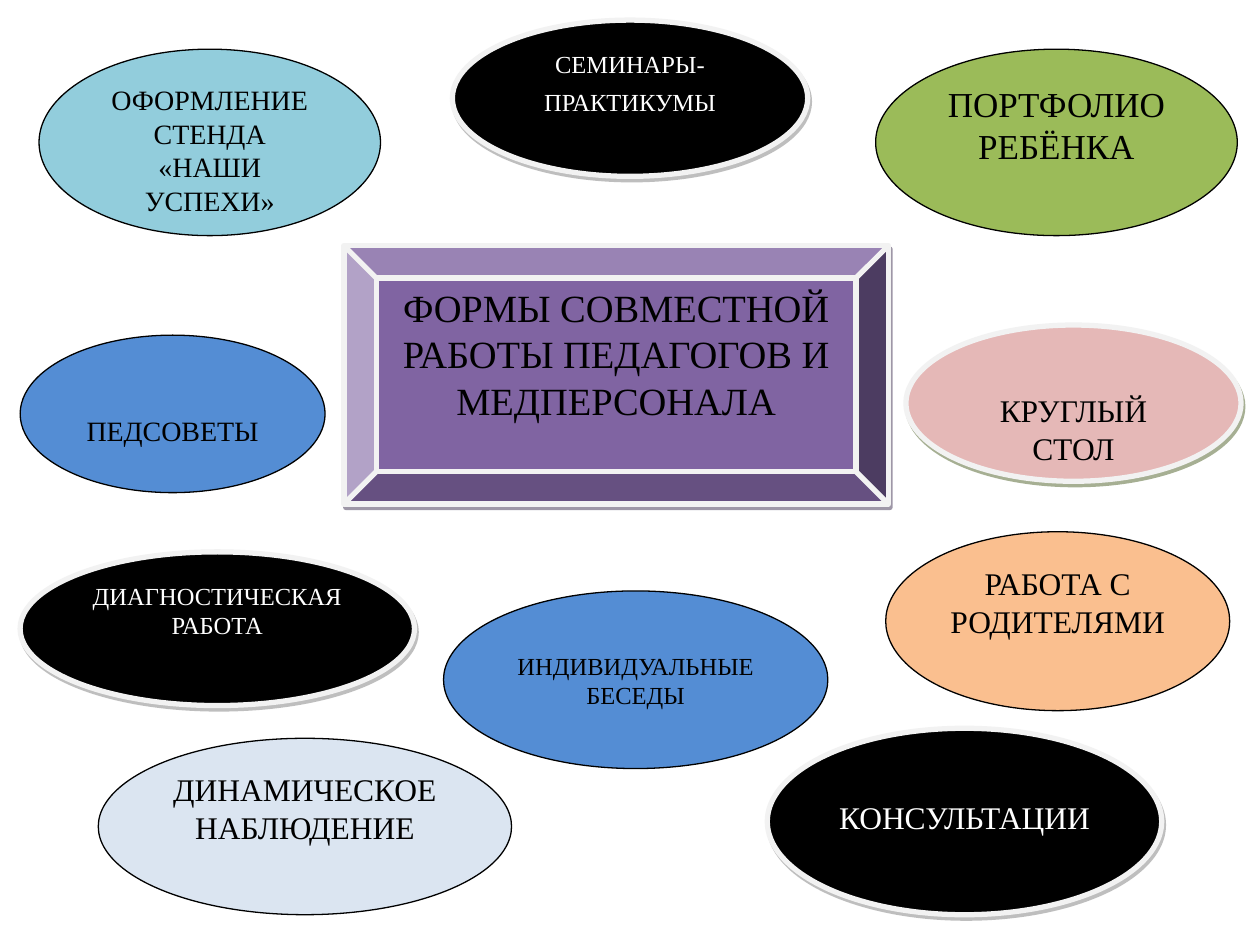
from lxml import etree
from pptx import Presentation
from pptx.dml.color import RGBColor
from pptx.enum.shapes import MSO_SHAPE
from pptx.enum.text import MSO_ANCHOR, PP_ALIGN
from pptx.oxml.ns import qn
from pptx.util import Inches, Pt

OVAL, BEVEL = MSO_SHAPE.OVAL, MSO_SHAPE.BEVEL
TOP, CENTER = MSO_ANCHOR.TOP, PP_ALIGN.CENTER

FONT = "Times New Roman"
BLACK = RGBColor(0x00, 0x00, 0x00)
WHITE = RGBColor(0xFF, 0xFF, 0xFF)
FRAME = RGBColor(0xF2, 0xF2, 0xF2)
PURPLE = RGBColor(0x80, 0x64, 0xA2)
BLUE = RGBColor(0x54, 0x8D, 0xD4)
AQUA = RGBColor(0x92, 0xCD, 0xDC)
GREEN = RGBColor(0x9B, 0xBB, 0x59)
PINK = RGBColor(0xE5, 0xB8, 0xB7)
ORANGE = RGBColor(0xFA, 0xBF, 0x8F)
PALE_BLUE = RGBColor(0xDB, 0xE5, 0xF1)
DARK_PURPLE = RGBColor(0x3F, 0x31, 0x51)
DARK_GREEN = RGBColor(0x4E, 0x61, 0x28)
GRAY = RGBColor(0x7F, 0x7F, 0x7F)

# left, top, width, height, fill, text, size, other format
OVALS = [
    (0.16, 2.66, 2.42, 1.25, BLUE, "ПЕДСОВЕТЫ", 16, dict(drop=0.39)),
    (0.31, 0.39, 2.71, 1.48, AQUA, "ОФОРМЛЕНИЕ СТЕНДА\n«НАШИ УСПЕХИ»", 16, {}),
    (6.95, 0.39, 2.87, 1.48, GREEN, "ПОРТФОЛИО РЕБЁНКА", 20, {}),
    (7.19, 2.58, 2.66, 1.24, PINK, "КРУГЛЫЙ СТОЛ", 18,
     dict(drop=0.29, shadow=DARK_GREEN)),
    (6.09, 5.78, 3.13, 1.48, BLACK, "КОНСУЛЬТАЦИИ", 18,
     dict(drop=0.29, color=WHITE, shadow=GRAY)),
    (3.52, 4.69, 3.05, 1.41, BLUE, "ИНДИВИДУАЛЬНЫЕ\nБЕСЕДЫ", 14, dict(drop=0.22)),
    (3.59, 0.16, 2.82, 1.24, BLACK, "СЕМИНАРЫ-\nПРАКТИКУМЫ", 14,
     dict(after=5, color=WHITE, shadow=GRAY)),
    (7.03, 4.22, 2.73, 1.42, ORANGE, "РАБОТА С РОДИТЕЛЯМИ", 18, {}),
    (0.16, 4.38, 3.13, 1.22, BLACK, "ДИАГНОСТИЧЕСКАЯ РАБОТА", 14,
     dict(color=WHITE, shadow=GRAY)),
    (0.78, 5.86, 3.28, 1.4, PALE_BLUE, "ДИНАМИЧЕСКОЕ НАБЛЮДЕНИЕ", 18, {}),
]


def set_text(sp, text, size, color=BLACK, after=0, drop=0):
    """Write centred paragraphs, starting drop inches below the usual inset."""
    tf = sp.text_frame
    tf.word_wrap = True
    tf.vertical_anchor = TOP
    tf.margin_top = Inches(0.05 + drop)
    for i, line in enumerate(text.split("\n")):
        p = tf.add_paragraph() if i else tf.paragraphs[0]
        p.alignment = CENTER
        p.space_after = Pt(after)
        r = p.add_run()
        r.text = line
        r.font.name = FONT
        r.font.size = Pt(size)
        r.font.color.rgb = color


def add_shadow(sp, color):
    effects = sp._element.spPr.find(qn("a:effectLst"))
    outer = etree.SubElement(effects, qn("a:outerShdw"), blurRad="0",
                             dist=str(Pt(2.2)), dir=str(63 * 60000),
                             algn="ctr", rotWithShape="0")
    clr = etree.SubElement(outer, qn("a:srgbClr"), val=str(color))
    etree.SubElement(clr, qn("a:alpha"), val="50000")


def add_figure(s, kind, left, top, width, height, fill, text, size,
               shadow=None, **text_format):
    """Add a filled shape; one with a shadow also gets a thick light frame."""
    sp = s.shapes.add_shape(kind, Inches(left), Inches(top),
                            Inches(width), Inches(height))
    sp.shadow.inherit = False
    sp.fill.solid()
    sp.fill.fore_color.rgb = fill
    sp.line.color.rgb = FRAME if shadow else BLACK
    sp.line.width = Pt(3 if shadow else 0.75)
    if shadow:
        add_shadow(sp, shadow)
    set_text(sp, text, size, **text_format)


def main():
    prs = Presentation()
    prs.slide_width, prs.slide_height = Inches(10), Inches(7.5)
    s = prs.slides.add_slide(prs.slide_layouts[6])
    add_figure(s, BEVEL, 2.73, 1.95, 4.32, 2.05, PURPLE,
               "ФОРМЫ СОВМЕСТНОЙ РАБОТЫ ПЕДАГОГОВ И МЕДПЕРСОНАЛА", 22,
               shadow=DARK_PURPLE)
    for *figure, text_format in OVALS:
        add_figure(s, OVAL, *figure, **text_format)
    prs.save("out.pptx")


if __name__ == "__main__":
    main()
